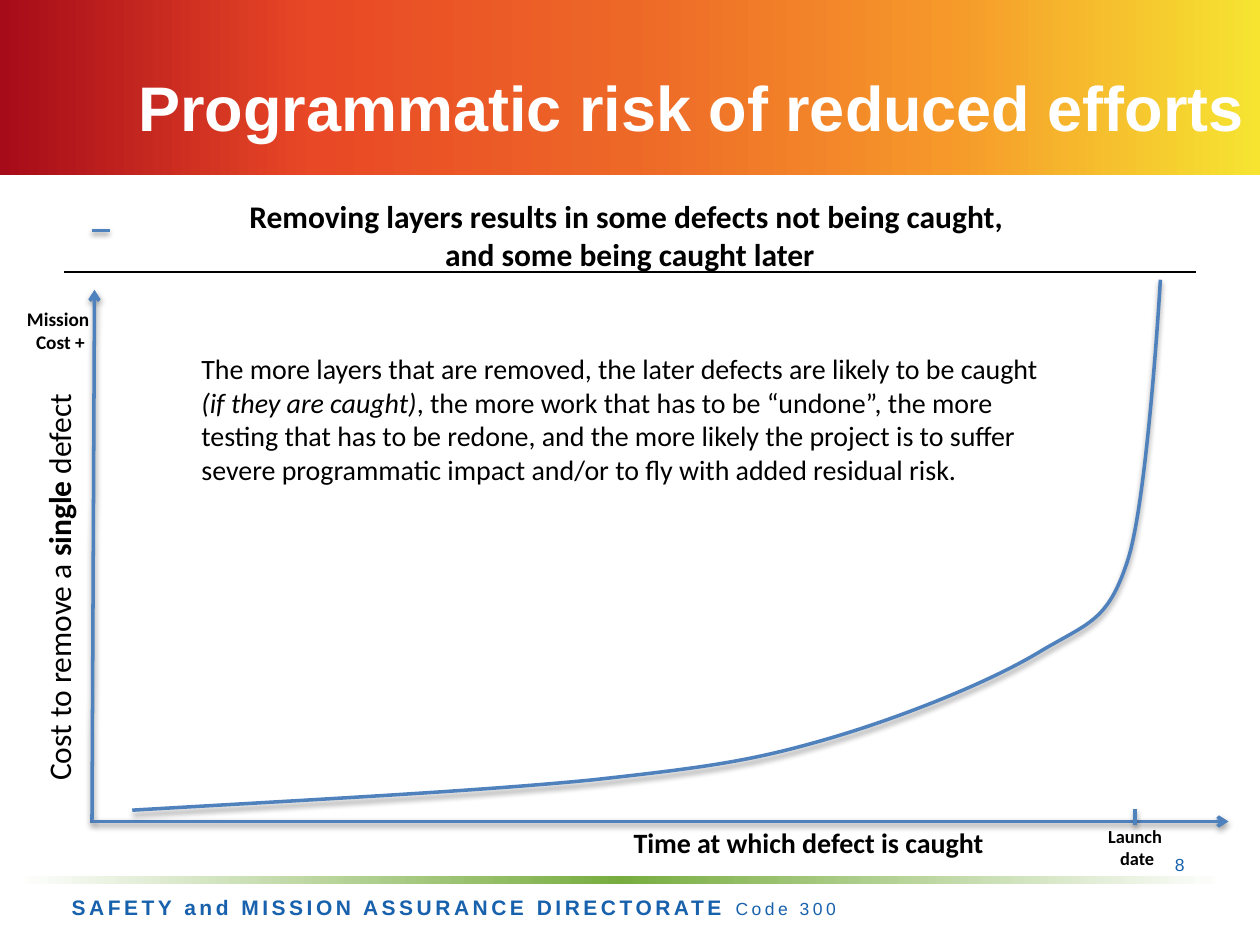
from dataclasses import dataclass

from lxml import etree
from pptx import Presentation
from pptx.dml.color import RGBColor
from pptx.enum.shapes import MSO_CONNECTOR, MSO_SHAPE
from pptx.enum.text import MSO_ANCHOR, PP_ALIGN
from pptx.oxml import parse_xml
from pptx.oxml.ns import nsdecls, qn
from pptx.util import Inches, Pt

STRAIGHT = MSO_CONNECTOR.STRAIGHT
RECTANGLE = MSO_SHAPE.RECTANGLE
LEFT, CENTER, RIGHT = PP_ALIGN.LEFT, PP_ALIGN.CENTER, PP_ALIGN.RIGHT
TOP, MIDDLE = MSO_ANCHOR.TOP, MSO_ANCHOR.MIDDLE
BLACK, WHITE, BLUE, NAVY = "000000", "FFFFFF", "4F81BD", "1861AC"


@dataclass
class Span:
    text: str
    bold: bool | None = None
    italic: bool | None = None
    size: float | None = None


@dataclass
class Label:
    box: tuple[float, float, float, float]
    paragraphs: list[list[Span]]
    size: float
    bold: bool = False
    font: str = "Calibri"
    color: str = BLACK
    align: PP_ALIGN = LEFT
    anchor: MSO_ANCHOR = TOP
    wrap: bool = True
    rotation: float = 0
    space_before: float = 0
    tracking: float = 0


@dataclass
class Rule:
    start: tuple[float, float]
    end: tuple[float, float]
    color: str = BLUE
    width: float = 2
    arrow: bool = False
    shadow: bool = True


@dataclass
class Band:
    box: tuple[float, float, float, float]
    stops: list[tuple[int, str]]


BANDS = [
    Band((0, 0, 10, 1.39), [(0, "A60B19"), (25, "E94826"), (50, "ED6827"),
                            (75, "F6982A"), (100, "F6E431")]),
    Band((0.12, 6.95, 9.61, 0.07), [(0, WHITE), (50, "77AD3F"), (100, WHITE)]),
]

RULES = [
    Rule((0.51, 2.16), (9.49, 2.16), BLACK, 1.5, shadow=False),
    Rule((0.73, 6.53), (0.75, 2.3), arrow=True),   # cost axis
    Rule((0.74, 6.52), (9.75, 6.52), arrow=True),  # time axis
    Rule((0.73, 1.83), (0.87, 1.83)),              # cost tick
    Rule((9.01, 6.42), (9.01, 6.55)),              # launch tick
]

# Start point, then two control points and an end point per segment
COST_CURVE = [
    (1.05, 6.43),
    (2.42, 6.35), (3.78, 6.28), (4.7, 6.19),
    (5.61, 6.09), (5.96, 6.04), (6.55, 5.87),
    (7.14, 5.7), (7.84, 5.42), (8.24, 5.18),
    (8.64, 4.94), (8.79, 4.94), (8.95, 4.45),
    (9.11, 3.96), (9.21, 2.22), (9.21, 2.22),
]

LABELS = [
    Label((0.47, 7.05, 8.25, 0.3),
          [[Span("SAFETY and MISSION ASSURANCE DIRECTORATE ", bold=True),
            Span("Code 300", size=10)]],
          12, font="Arial", color=NAVY, tracking=2),
    Label((-1.2, 4.43, 3.33, 0.4),
          [[Span("Cost to remove a "), Span("single", bold=True), Span(" defect")]],
          18, wrap=False, rotation=270),
    Label((4.93, 6.5, 3.1, 0.37), [[Span("Time at which defect is caught")]],
          16, bold=True),
    Label((1.5, 2.74, 7.01, 1.18),
          [[Span("The more layers that are removed, the later defects are likely "
                 "to be caught "),
            Span("(if they are caught)", italic=True),
            Span(", the more work that has to be “undone”, the more testing that has "
                 "to be redone, and the more likely the project is to suffer severe "
                 "programmatic impact and/or to fly with added residual risk.")]],
          16, space_before=6),
    Label((8.68, 6.5, 0.69, 0.45), [[Span("Launch ")], [Span("date")]],
          10.5, bold=True, align=CENTER),
    Label((0.1, 2.39, 0.76, 0.47), [[Span("Mission ")], [Span("Cost +")]],
          11, bold=True, align=CENTER),
    Label((7.17, 6.71, 2.33, 0.3), [[Span("8")]],
          10, font="Arial", color=NAVY, align=RIGHT, anchor=MIDDLE),
    Label((0.5, 1.56, 9, 0.61),
          [[Span("Removing layers results in some defects not being caught, ")],
           [Span("and some being caught later")]],
          18, bold=True, align=CENTER, anchor=MIDDLE),
    Label((1, 0.26, 9, 1.17), [[Span("Programmatic risk of reduced efforts")]],
          36, bold=True, font="Arial", color=WHITE, anchor=MIDDLE),
]


def rgb(value: str) -> RGBColor:
    return RGBColor.from_string(value)


def style_line(shape, color: str, width: float, shadow: bool) -> None:
    shape.line.color.rgb = rgb(color)
    shape.line.width = Pt(width)
    outer = (f'<a:outerShdw blurRad="{Pt(3.1)}" dist="{Pt(1.6)}" dir="5400000" '
             'rotWithShape="0"><a:srgbClr val="000000"><a:alpha val="38000"/>'
             '</a:srgbClr></a:outerShdw>') if shadow else ""
    properties = shape._element.spPr
    properties.append(
        parse_xml(f'<a:effectLst {nsdecls("a")}>{outer}</a:effectLst>'))


def draw_band(slide, band: Band) -> None:
    shape = slide.shapes.add_shape(RECTANGLE, *map(Inches, band.box))
    shape.shadow.inherit = False
    shape.line.fill.background()
    shape.fill.gradient()
    shape.fill.gradient_angle = 0
    stops = shape._element.spPr.find(qn("a:gradFill")).find(qn("a:gsLst"))
    for old in list(stops):
        stops.remove(old)
    for position, color in band.stops:
        stop = etree.SubElement(stops, qn("a:gs"), pos=str(position * 1000))
        etree.SubElement(stop, qn("a:srgbClr"), val=color)


def draw_rule(slide, rule: Rule) -> None:
    line = slide.shapes.add_connector(
        STRAIGHT, *map(Inches, rule.start + rule.end))
    style_line(line, rule.color, rule.width, rule.shadow)
    if rule.arrow:
        outline = line._element.spPr.find(qn("a:ln"))
        etree.SubElement(outline, qn("a:tailEnd"), type="arrow")


def draw_curve(slide, points: list[tuple[float, float]]) -> None:
    start, *rest = [(Inches(x), Inches(y)) for x, y in points]
    builder = slide.shapes.build_freeform(*start)
    builder.add_line_segments(rest, close=False)
    curve = builder.convert_to_shape()
    curve.fill.background()
    style_line(curve, BLUE, 2, shadow=True)
    # Join every three straight steps into one Bézier segment
    steps = list(curve._element.iter(qn("a:lnTo")))
    outline = steps[0].getparent()
    for first in range(0, len(steps), 3):
        segment = etree.SubElement(outline, qn("a:cubicBezTo"))
        for step in steps[first:first + 3]:
            segment.append(step[0])
            outline.remove(step)


def draw_label(slide, label: Label) -> None:
    box = slide.shapes.add_textbox(*map(Inches, label.box))
    box.rotation = label.rotation
    frame = box.text_frame
    frame.word_wrap = label.wrap
    frame.vertical_anchor = label.anchor
    for index, spans in enumerate(label.paragraphs):
        paragraph = frame.add_paragraph() if index else frame.paragraphs[0]
        paragraph.alignment = label.align
        paragraph.space_before = Pt(label.space_before)
        font = paragraph.font
        font.name, font.size, font.bold = label.font, Pt(label.size), label.bold
        font.color.rgb = rgb(label.color)
        for span in spans:
            run = paragraph.add_run()
            run.text = span.text
            run.font.bold, run.font.italic = span.bold, span.italic
            if span.size:
                run.font.size = Pt(span.size)
            if label.tracking:
                run.font._element.set("spc", str(int(label.tracking * 100)))


def main() -> None:
    deck = Presentation()
    deck.slide_width, deck.slide_height = Inches(10), Inches(7.5)
    slide = deck.slides.add_slide(deck.slide_layouts[6])
    for band in BANDS:
        draw_band(slide, band)
    for rule in RULES:
        draw_rule(slide, rule)
    draw_curve(slide, COST_CURVE)
    for label in LABELS:
        draw_label(slide, label)
    deck.save("out.pptx")


if __name__ == "__main__":
    main()
